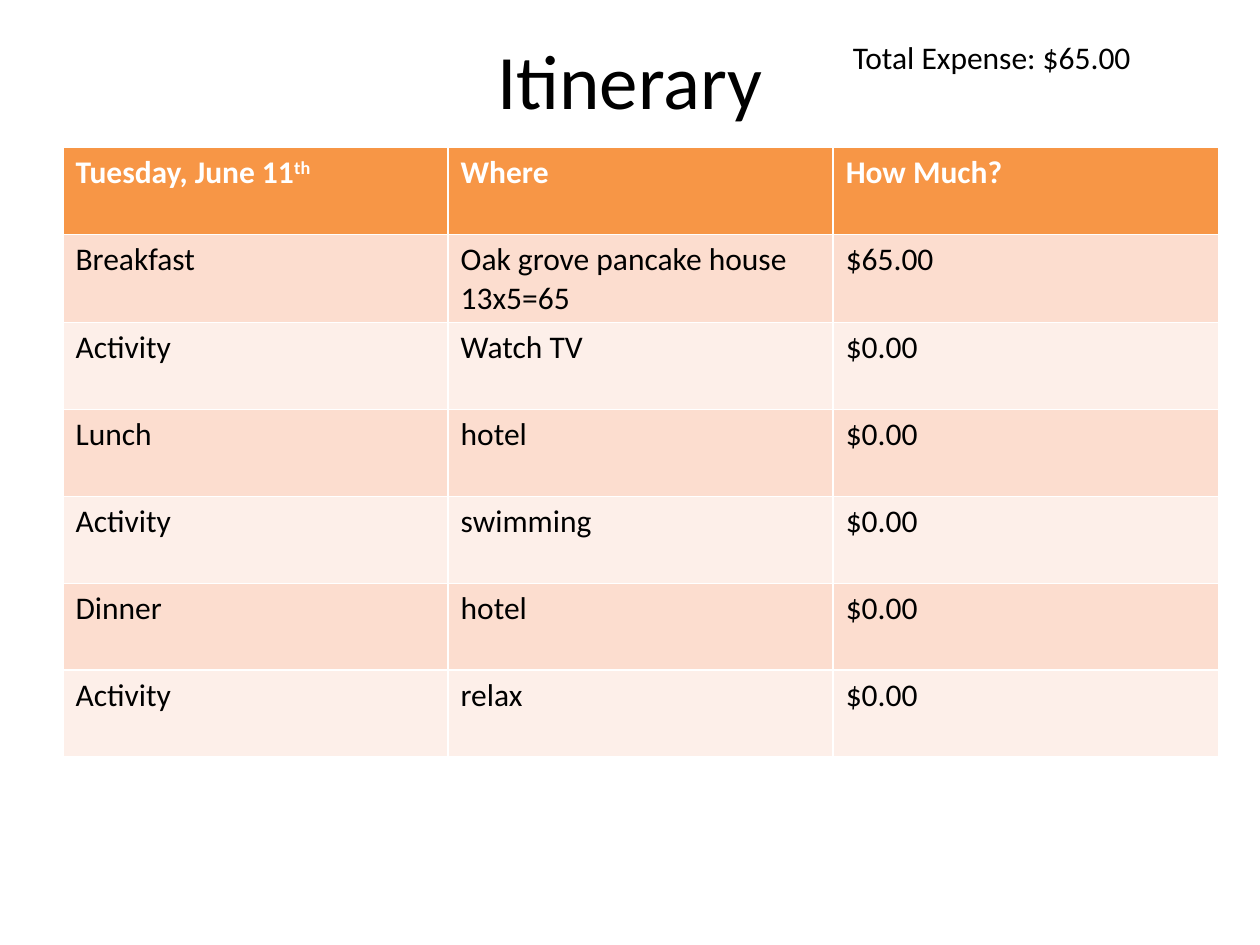
from pptx import Presentation
from pptx.dml.color import RGBColor
from pptx.enum.text import MSO_ANCHOR, MSO_AUTO_SIZE, PP_ALIGN
from pptx.util import Inches, Pt

# Content
TITLE = "Itinerary"
TOTAL = "Total Expense: $65.00"
DAY, ORDINAL = "Tuesday, June 11", "th"
ITINERARY = [
    (DAY, "Where", "How Much?"),
    ("Breakfast", "Oak grove pancake house\n13x5=65", "$65.00"),
    ("Activity", "Watch TV", "$0.00"),
    ("Lunch", "hotel", "$0.00"),
    ("Activity", "swimming", "$0.00"),
    ("Dinner", "hotel", "$0.00"),
    ("Activity", "relax", "$0.00"),
]

# Formats
BLACK = RGBColor(0x00, 0x00, 0x00)
WHITE = RGBColor(0xFF, 0xFF, 0xFF)
ORANGE = RGBColor(0xF7, 0x96, 0x46)
BANDS = (RGBColor(0xFC, 0xDD, 0xCF), RGBColor(0xFD, 0xEF, 0xE9))
TITLE_FONT = {"name": "Calibri", "size": Pt(44), "color": BLACK}
BODY_FONT = {"name": "Calibri", "size": Pt(18), "bold": False, "color": BLACK}
HEADER_FONT = {**BODY_FONT, "bold": True, "color": WHITE}


def format_text(frame, font_format):
    for paragraph in frame.paragraphs:
        for run in paragraph.runs:
            for attribute, value in font_format.items():
                if attribute == "color":
                    run.font.color.rgb = value
                else:
                    setattr(run.font, attribute, value)


def place(shape, left, top, width, height):
    box = {"left": left, "top": top, "width": width, "height": height}
    for side, length in box.items():
        setattr(shape, side, Inches(length))


def add_itinerary(slide):
    row_count, column_count = len(ITINERARY), len(ITINERARY[0])
    table = slide.shapes.add_table(
        row_count, column_count,
        Inches(0.5), Inches(1.17), Inches(9.17), Inches(4.83)).table
    for row, entries in enumerate(ITINERARY):
        is_header = row == 0
        for column, entry in enumerate(entries):
            cell = table.cell(row, column)
            cell.text = entry
            if entry == DAY:
                suffix = cell.text_frame.paragraphs[0].add_run()
                suffix.text = ORDINAL
                suffix.font._element.set("baseline", "30000")
            cell.fill.solid()
            cell.fill.fore_color.rgb = ORANGE if is_header else BANDS[(row - 1) % 2]
            format_text(cell.text_frame, HEADER_FONT if is_header else BODY_FONT)


def main():
    deck = Presentation()
    deck.slide_width, deck.slide_height = Inches(10), Inches(7.5)
    slide = deck.slides.add_slide(deck.slide_layouts[5])

    # Title
    title = slide.shapes.title
    place(title, 0.5, 0, 9, 1.25)
    title.text_frame.text = TITLE
    title.text_frame.vertical_anchor = MSO_ANCHOR.MIDDLE
    title.text_frame.paragraphs[0].alignment = PP_ALIGN.CENTER
    format_text(title.text_frame, TITLE_FONT)

    # Total expense
    total = slide.shapes.add_textbox(
        Inches(6.67), Inches(0.25), Inches(3.08), Inches(0.4)).text_frame
    total.word_wrap = True
    total.auto_size = MSO_AUTO_SIZE.SHAPE_TO_FIT_TEXT
    total.text = TOTAL
    format_text(total, BODY_FONT)

    # Day plan
    add_itinerary(slide)
    deck.save("out.pptx")


if __name__ == "__main__":
    main()
